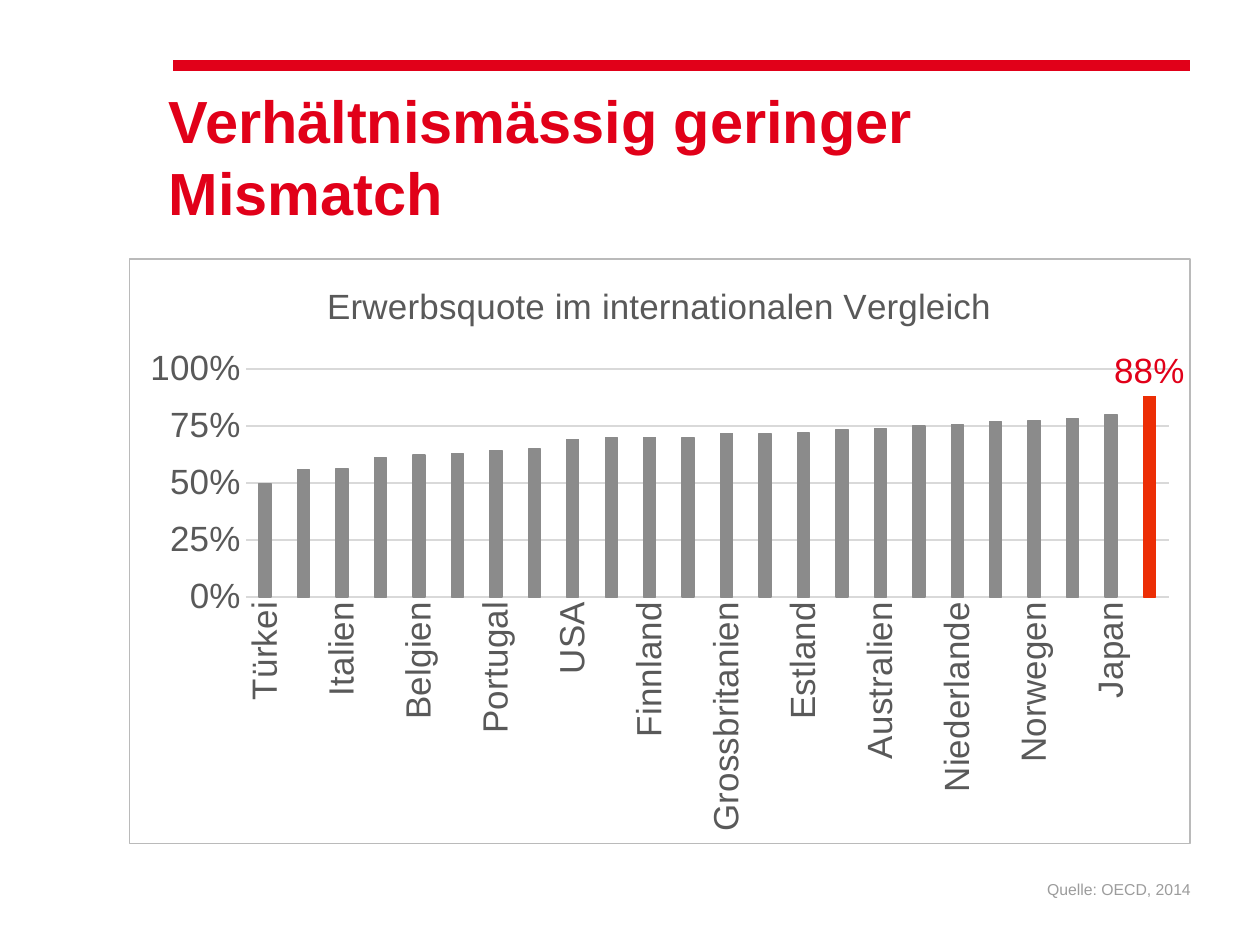
import pptx
import pptx.chart.data
import pptx.dml.color
import pptx.enum.chart
import pptx.enum.shapes
import pptx.enum.text
import pptx.oxml
import pptx.oxml.ns
import pptx.util
from lxml import etree

Pt = pptx.util.Pt
qn = pptx.oxml.ns.qn
RED, GREY, TEXT, GRID = "E10019", "8B8B8B", "595959", "D9D9D9"


def rgb(color):
    return pptx.dml.color.RGBColor.from_string(color)


def write(tf, text, size=20, color=TEXT, bold=False, align=None, anchor=None, spacing=None):
    tf.word_wrap = True
    tf.margin_left = tf.margin_top = tf.margin_right = tf.margin_bottom = 0
    tf.vertical_anchor = anchor
    p = tf.paragraphs[0]
    p.alignment, p.line_spacing = align, spacing
    r = p.add_run()
    r.text = text
    r.font.name, r.font.size, r.font.bold = "Arial", Pt(size), bold
    r.font.color.rgb = rgb(color)


prs = pptx.Presentation()
prs.slide_width, prs.slide_height = Pt(720), Pt(540)
s = prs.slides.add_slide(prs.slide_layouts[5])
Anchor = pptx.enum.text.MSO_ANCHOR
Align = pptx.enum.text.PP_ALIGN

# Red rule and title
rule = s.shapes.add_connector(pptx.enum.shapes.MSO_CONNECTOR.STRAIGHT,
                              Pt(99.1), Pt(37.4), Pt(680.1), Pt(37.4))
rule.line.color.rgb = rgb(RED)
rule.line.width = Pt(6)
etree.SubElement(rule._element.spPr, qn("a:effectLst"))

title = s.shapes.title
title.left, title.top, title.width, title.height = Pt(96.5), Pt(48.2), Pt(583.9), Pt(82.8)
write(title.text_frame, "Verhältnismässig geringer Mismatch", size=34, color=RED,
      bold=True, align=Align.LEFT, anchor=Anchor.TOP, spacing=1.0)

# Employment rate by country
rates = {
    "Türkei": 0.497, "Spanien": 0.558, "Italien": 0.563, "Ungarn": 0.61,
    "Belgien": 0.622, "Irland": 0.63, "Portugal": 0.641, "Frankreich": 0.649,
    "USA": 0.692, "Israel": 0.699, "Finnland": 0.7, "Tschechien": 0.7,
    "Grossbritanien": 0.717, "Österreich": 0.717, "Estland": 0.719, "Kanada": 0.734,
    "Australien": 0.739, "Deutschland": 0.749, "Niederlande": 0.756, "Schweden": 0.769,
    "Norwegen": 0.775, "Neuseeland": 0.782, "Japan": 0.799, "Schweiz": 0.88,
}
data = pptx.chart.data.CategoryChartData(number_format="0%")
data.categories = list(rates)
data.add_series("Series 1", list(rates.values()))
chart = s.shapes.add_chart(pptx.enum.chart.XL_CHART_TYPE.COLUMN_CLUSTERED,
                           Pt(73.44), Pt(147.6), Pt(606.96), Pt(334.8), data).chart
chart.has_legend = False
chart.font.name, chart.font.size = "Arial", Pt(20)
chart.has_title = True
write(chart.chart_title.text_frame, "Erwerbsquote im internationalen Vergleich")
chart.chart_title.include_in_layout = False

cat, val = chart.category_axis, chart.value_axis
for axis in (cat, val):
    axis.major_tick_mark = axis.minor_tick_mark = pptx.enum.chart.XL_TICK_MARK.NONE
    font = axis.tick_labels.font
    font.name, font.size, font.color.rgb = "Arial", Pt(20), rgb(TEXT)
val.minimum_scale, val.maximum_scale, val.major_unit = 0, 1, 0.25
val.tick_labels.number_format = "0%"
val.tick_labels.number_format_is_linked = False
val.format.line.fill.background()
for line in (cat.format.line, val.major_gridlines.format.line):
    line.color.rgb = rgb(GRID)
    line.width = Pt(0.75)
body = cat._element.find(qn("c:txPr")).find(qn("a:bodyPr"))
body.set("rot", "-5400000")
body.set("vert", "horz")

plot = chart.plots[0]
plot.gap_width, plot.overlap, plot.vary_by_categories = 219, -27, False
series = plot.series[0]
series.data_labels.show_value = False
swiss = series.points[len(rates) - 1]
for bar, fill in ((series, GREY), (swiss, "EC2E05")):
    bar.format.fill.solid()
    bar.format.fill.fore_color.rgb = rgb(fill)
    bar.format.line.color.rgb = rgb(fill)
    bar.format.line.width = Pt(0.75)
label = swiss.data_label
label.font.name, label.font.size, label.font.color.rgb = "Arial", Pt(20), rgb(RED)
label.position = pptx.enum.chart.XL_LABEL_POSITION.OUTSIDE_END

# Chart border
chart.element.find(qn("c:chart")).addnext(pptx.oxml.parse_xml(
    f'<c:spPr {pptx.oxml.ns.nsdecls("c", "a")}><a:noFill/><a:ln w="{Pt(0.75)}"><a:solidFill>'
    '<a:srgbClr val="BABABA"/></a:solidFill></a:ln></c:spPr>'))

# Source line
source = s.shapes.add_textbox(Pt(360), Pt(482.4), Pt(320.4), Pt(31))
write(source.text_frame, "Quelle: OECD, 2014", size=9, color="9C9C9C",
      align=Align.RIGHT, anchor=Anchor.BOTTOM)

prs.save("out.pptx")
